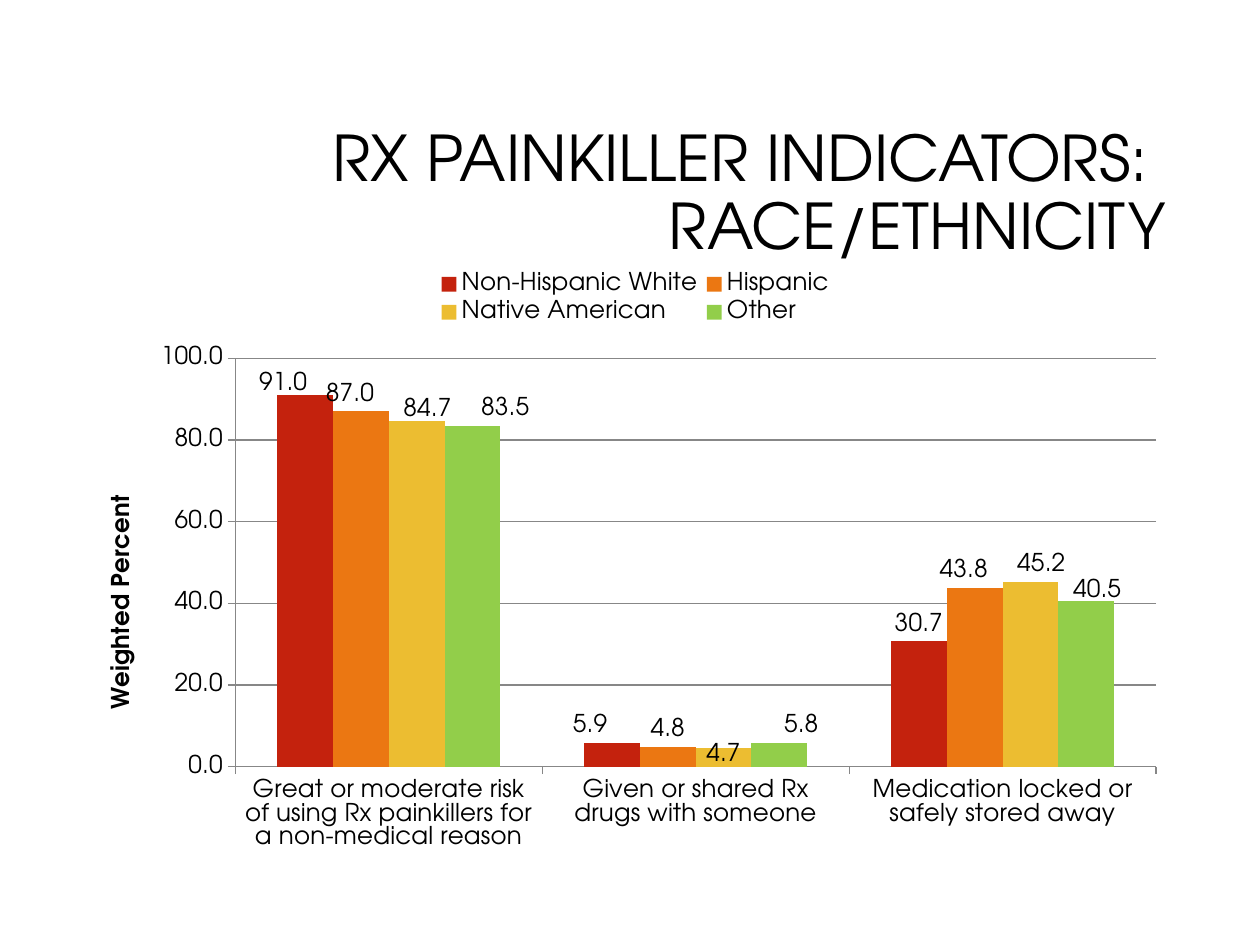
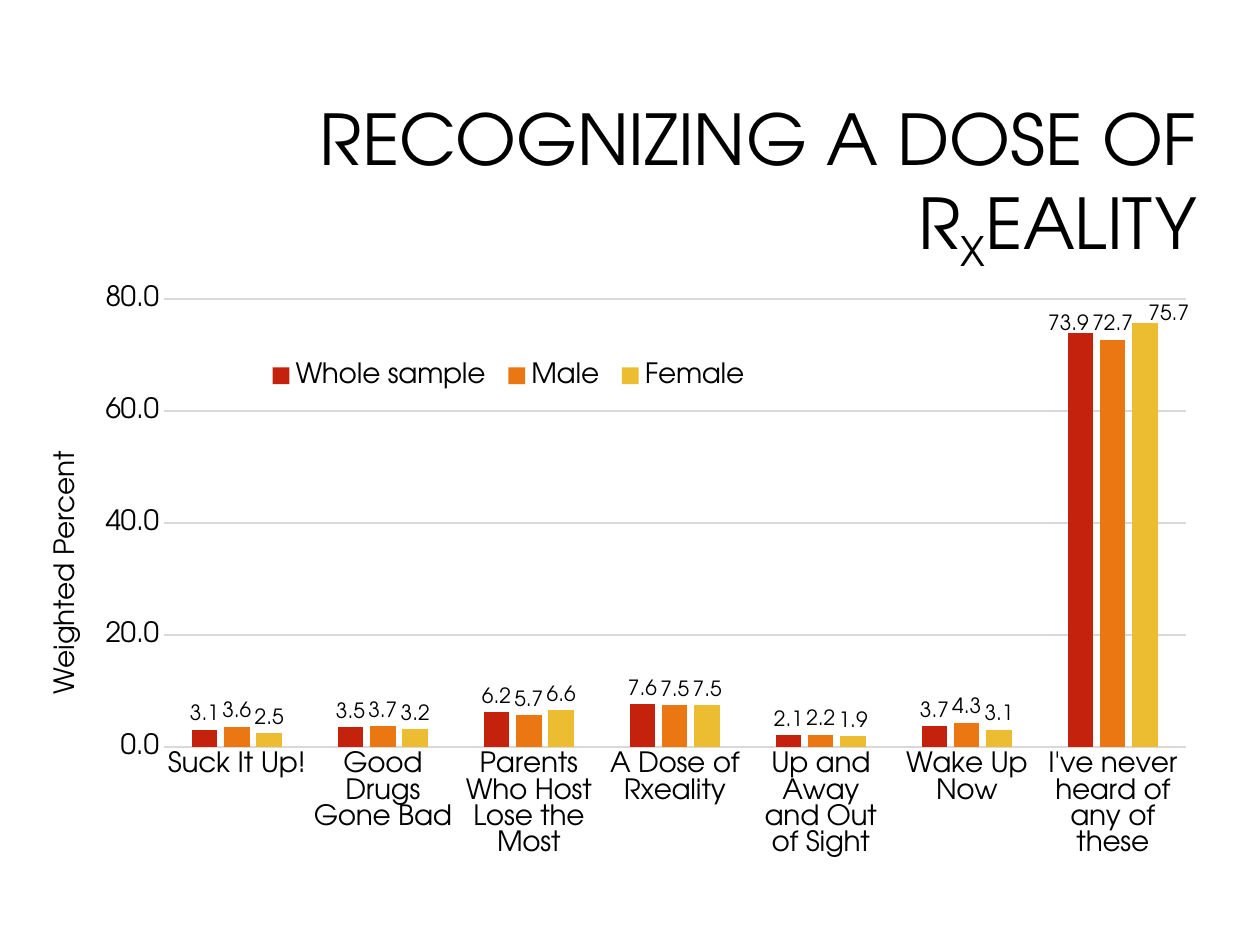
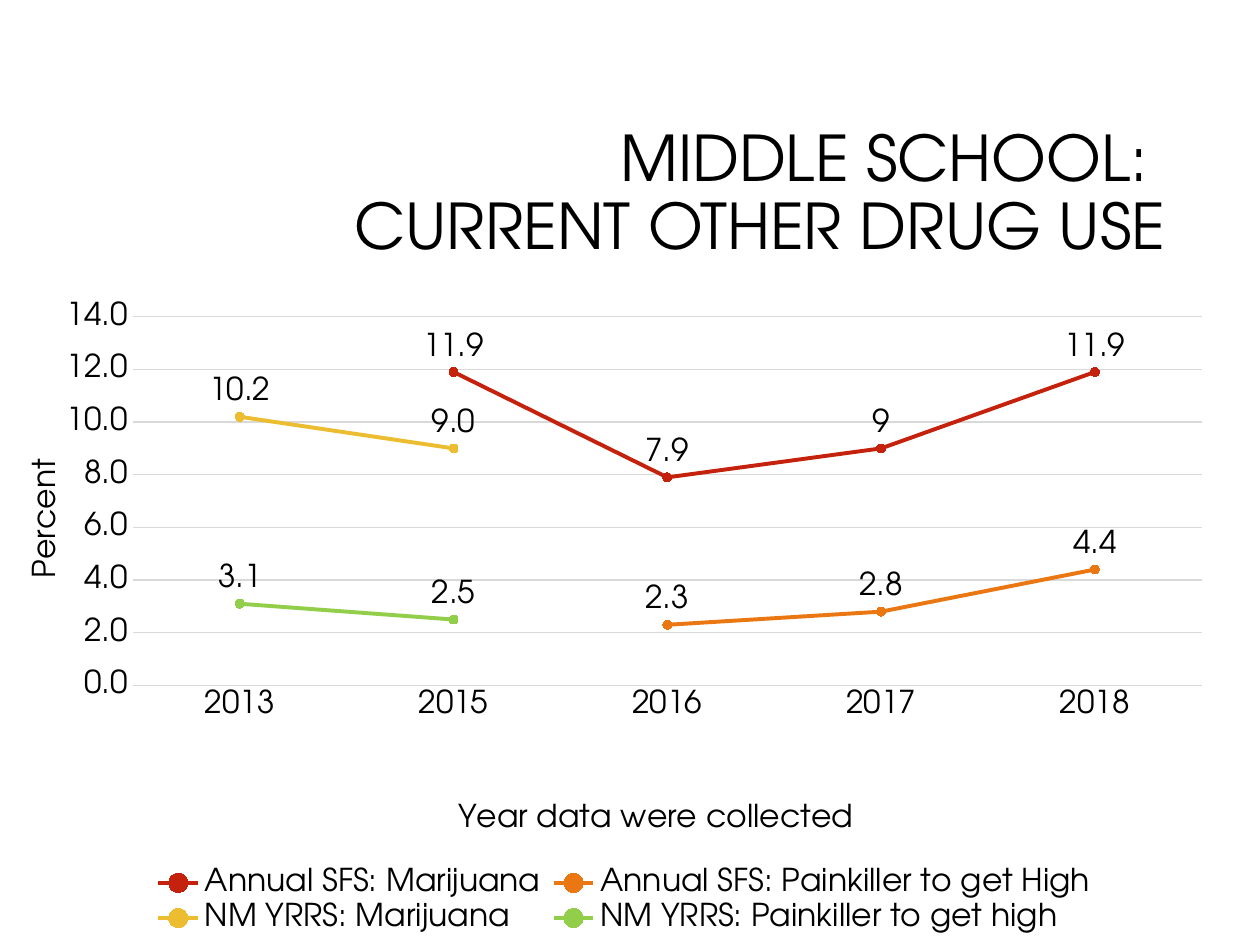
from pptx import Presentation
from pptx.chart.data import CategoryChartData
from pptx.dml.color import RGBColor
from pptx.enum.chart import XL_CHART_TYPE, XL_LABEL_POSITION, XL_LEGEND_POSITION, XL_MARKER_STYLE, XL_TICK_MARK
from pptx.enum.text import MSO_ANCHOR, PP_ALIGN
from pptx.oxml import parse_xml
from pptx.oxml.ns import nsdecls
from pptx.util import Pt

FACE = "TeX Gyre Adventor"
INK = "000000"
HUES = ["C4220D", "EB7712", "ECBD31", "92CE4A"]
KINDS = {"bar": XL_CHART_TYPE.COLUMN_CLUSTERED, "line": XL_CHART_TYPE.LINE_MARKERS}
SPOTS = {"bar": XL_LABEL_POSITION.OUTSIDE_END, "line": XL_LABEL_POSITION.ABOVE}
SIDES = {"top": XL_LEGEND_POSITION.TOP, "bottom": XL_LEGEND_POSITION.BOTTOM}
HEAD = (171.4, 60.5, 501.8, 101.5)

SLIDES = [
    {
        "title": ["RX PAINKILLER INDICATORS: \vRACE/ETHNICITY"],
        "head": HEAD, "size": 36,
        "kind": "bar", "box": (46.8, 149.8, 626.4, 343.4),
        "font": 14, "label": 14, "bold": True,
        "cats": ["Great or moderate risk of using Rx painkillers for a non-medical reason",
                 "Given or shared Rx drugs with someone",
                 "Medication locked or safely stored away"],
        "rows": [("Non-Hispanic White", [91, 5.9, 30.7], "0.0"),
                 ("Hispanic", [87, 4.8, 43.8], "0.0"),
                 ("Native American", [84.7, 4.7, 45.2], "0.0"),
                 ("Other", [83.5, 5.8, 40.5], "0.0")],
        "shifts": {(0, 0): (-0.02, 0.01), (0, 1): (-0.02, 0), (1, 0): (-0.01, 0),
                   (1, 2): (-0.01, 0), (2, 0): (0.01, 0.01), (2, 1): (0, 0.04),
                   (2, 2): (0.01, 0), (3, 0): (0.03, 0), (3, 1): (0.02, 0),
                   (3, 2): (0.01, 0.01)},
        "top": 100, "step": 20, "gap": 150, "lap": 0,
        "grid": "878787", "axis": True, "tick": XL_TICK_MARK.OUTSIDE,
        "plot": (0.14, 0.16, 0.84, 0.68),
        "side": "top", "key": (0.32, 0.01, 0.37, 0.1),
        "ytitle": ("Weighted Percent", (0.02, 0.38)),
    },
    {
        "title": ["RECOGNIZING A DOSE OF R", "X", "EALITY"],
        "head": (90, 44.6, 601.2, 123.1), "size": 40,
        "kind": "bar", "box": (12.2, 156.2, 679, 365.8),
        "font": 16, "label": 12, "bold": False,
        "cats": ["Suck It Up!", "Good Drugs Gone Bad", "Parents Who Host Lose the Most",
                 "A Dose of Rxeality", "Up and Away and Out of Sight", "Wake Up Now",
                 "I've never heard of any of these"],
        "rows": [("Whole sample", [3.1, 3.5, 6.2, 7.6, 2.1, 3.7, 73.9], "0.0"),
                 ("Male", [3.6, 3.7, 5.7, 7.5, 2.2, 4.3, 72.7], "0.0"),
                 ("Female", [2.5, 3.2, 6.6, 7.5, 1.9, 3.1, 75.7], "0.0")],
        "shifts": {(0, 6): (-0.01, 0.01), (2, 6): (0.02, 0.01)},
        "top": 80, "step": 20, "gap": 219, "lap": -27,
        "grid": "D9D9D9", "axis": False, "tick": XL_TICK_MARK.NONE,
        "plot": (0.12, 0.04, 0.86, 0.7),
        "side": "bottom", "key": (0.2, 0.13, 0.42, 0.06),
        "ytitle": ("Weighted Percent", (0.02, 0.27)),
    },
    {
        "title": ["MIDDLE SCHOOL: \vCURRENT OTHER DRUG USE"],
        "head": HEAD, "size": 36,
        "kind": "line", "box": (5.8, 149.8, 702, 390.2),
        "font": 18, "label": 18, "bold": False,
        "cats": ["2013", "2015", "2016", "2017", "2018"],
        "rows": [("Annual SFS: Marijuana", [None, 11.9, 7.9, 9, 11.9], "General"),
                 ("Annual SFS: Painkiller to get High", [None, None, 2.3, 2.8, 4.4], "0.0"),
                 ("NM YRRS: Marijuana", [10.2, 9, None, None, None], "0.0"),
                 ("NM YRRS: Painkiller to get high", [3.1, 2.5, None, None, None], "0.0")],
        "shifts": {},
        "top": 14, "step": 2,
        "grid": "D9D9D9", "axis": False, "tick": XL_TICK_MARK.NONE,
        "plot": (0.1, 0.08, 0.87, 0.54),
        "side": "bottom", "key": (0.11, 0.88, 0.78, 0.11),
        "ytitle": ("Percent", (0.01, 0.28)),
        "xtitle": ("Year data were collected", (0.36, 0.78)),
    },
]


def tint(code):
    return RGBColor.from_string(code)


def style(font, size, bold=False):
    font.name = FACE
    font.size = Pt(size)
    font.bold = bold
    font.color.rgb = tint(INK)


def place(host, at, spot, edge=True, inner=False):
    for old in host.xpath("./c:layout"):
        host.remove(old)
    tags = [("layoutTarget", "inner")] if inner else []
    if edge:
        tags += [("xMode", "edge"), ("yMode", "edge")]
    tags += zip("xywh", spot)
    body = "".join(f'<c:{tag} val="{val}"/>' for tag, val in tags)
    host.insert(at, parse_xml(
        f'<c:layout {nsdecls("c")}><c:manualLayout>{body}</c:manualLayout></c:layout>'))


def stroke(line, code, width=0.75):
    line.color.rgb = tint(code)
    line.width = Pt(width)


def add_head(slide, data):
    head = slide.shapes.title
    head.left, head.top, head.width, head.height = map(Pt, data["head"])
    frame = head.text_frame
    frame.word_wrap = True
    frame.vertical_anchor = MSO_ANCHOR.MIDDLE
    para = frame.paragraphs[0]
    first, *rest = data["title"]
    para.text = first
    for part in rest:
        para.add_run().text = part
    para.alignment = PP_ALIGN.RIGHT
    para.line_spacing = 0.9
    style(para.font, data["size"])
    if rest:
        head.element.xpath(".//a:r")[1].get_or_add_rPr().set("baseline", "-25000")


def name_axis(axis, data, key):
    text, spot = data[key]
    para = axis.axis_title.text_frame.paragraphs[0]
    para.text = text
    style(para.font, data["font"], data["bold"])
    title = axis.axis_title.element if hasattr(axis.axis_title, "element") else axis.element.xpath("./c:title")[0]
    place(title, 1, spot)
    if key == "ytitle":
        title.xpath(".//a:bodyPr")[0].set("rot", "-5400000")


def set_axes(chart, data):
    cat, val = chart.category_axis, chart.value_axis
    for axis in (cat, val):
        axis.major_tick_mark = data["tick"]
        axis.minor_tick_mark = XL_TICK_MARK.NONE
        style(axis.tick_labels.font, data["font"])
        stroke(axis.format.line, data["grid"])
    if not data["axis"]:
        val.format.line.fill.background()
    val.minimum_scale, val.maximum_scale, val.major_unit = 0, data["top"], data["step"]
    val.tick_labels.number_format = "0.0"
    val.tick_labels.number_format_is_linked = False
    val.has_major_gridlines = True
    stroke(val.major_gridlines.format.line, data["grid"])
    name_axis(val, data, "ytitle")
    if "xtitle" in data:
        name_axis(cat, data, "xtitle")


def set_rows(plot, data):
    spot = SPOTS[data["kind"]]
    for row, hue, (name, vals, form) in zip(plot.series, HUES, data["rows"]):
        if data["kind"] == "line":
            row.smooth = False
            stroke(row.format.line, hue, 2.25)
            row.marker.style = XL_MARKER_STYLE.CIRCLE
            row.marker.size = 5
            paint = row.marker.format
            stroke(paint.line, hue)
        else:
            paint = row.format
            row.invert_if_negative = False
        paint.fill.solid()
        paint.fill.fore_color.rgb = tint(hue)
        labels = row.data_labels
        labels.show_value = True
        labels.position = spot
        labels.number_format = form
        labels.number_format_is_linked = False
        style(labels.font, data["label"])


def shift_labels(chart, plot, data):
    for (row, col), move in data["shifts"].items():
        label = plot.series[row].points[col].data_label
        style(label.font, data["label"])
        label.position = SPOTS[data["kind"]]
        node = chart.element.xpath(".//c:ser")[row].xpath(f'.//c:dLbl[c:idx/@val="{col}"]')[0]
        place(node, 1, move, edge=False)


def add_graph(slide, data):
    feed = CategoryChartData()
    feed.categories = data["cats"]
    for name, vals, form in data["rows"]:
        feed.add_series(name, vals, form)
    chart = slide.shapes.add_chart(KINDS[data["kind"]], *map(Pt, data["box"]), feed).chart
    chart.has_title = False
    style(chart.font, data["font"])
    plot = chart.plots[0]
    plot.vary_by_categories = False
    if data["kind"] == "bar":
        plot.gap_width, plot.overlap = data["gap"], data["lap"]
    set_axes(chart, data)
    set_rows(plot, data)
    shift_labels(chart, plot, data)
    chart.has_legend = True
    chart.legend.position = SIDES[data["side"]]
    chart.legend.include_in_layout = False
    style(chart.legend.font, data["font"])
    place(chart.element.xpath(".//c:legend")[0], 1, data["key"])
    place(chart.element.xpath(".//c:plotArea")[0], 0, data["plot"], inner=True)


def main():
    deck = Presentation()
    deck.slide_width, deck.slide_height = Pt(720), Pt(540)
    for data in SLIDES:
        slide = deck.slides.add_slide(deck.slide_layouts[5])
        add_head(slide, data)
        add_graph(slide, data)
    deck.save("out.pptx")


if __name__ == "__main__":
    main()
